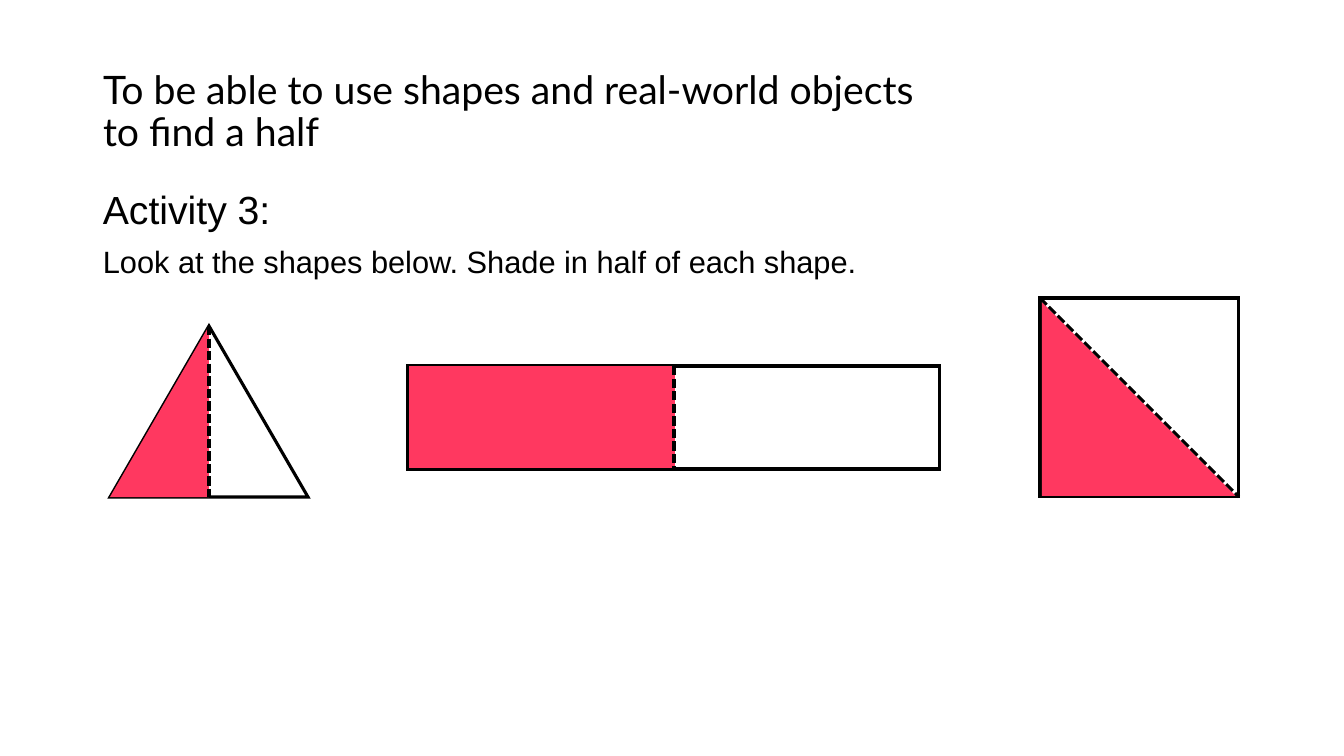
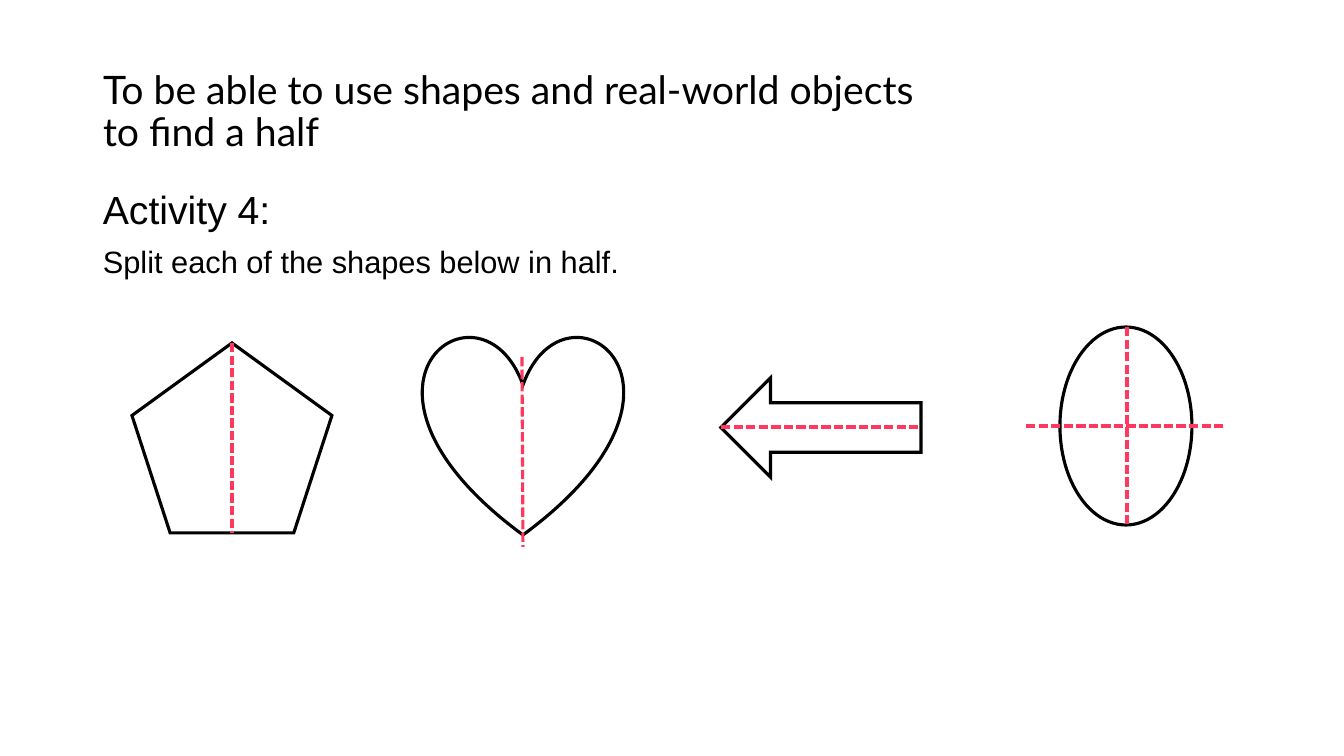
"""Build two activity slides about finding half of a shape."""
from lxml.etree import SubElement
from pptx import Presentation
from pptx.dml.color import RGBColor
from pptx.enum.dml import MSO_LINE
from pptx.enum.shapes import MSO_CONNECTOR, MSO_SHAPE as SHAPE
from pptx.enum.text import MSO_ANCHOR as ANCHOR, MSO_AUTO_SIZE, PP_ALIGN
from pptx.oxml.ns import qn
from pptx.util import Pt

COLOURS = {"ink": "000000", "paper": "FFFFFF", "half": "FF3860"}
RGB = {name: RGBColor.from_string(value) for name, value in COLOURS.items()}
EMU_PER_PX = 914400 / 100.8
OUTLINE = Pt(2.25)
TITLE = "To be able to use shapes and real-world objects\vto find a half"
TITLE_BOX = (93, 40, 968, 146)
TASK_BOX = (93, 186, 1159, 480)

ACTIVITIES = [
    {
        "task": ["Activity 3:", "Look at the shapes below. Shade in half of each shape."],
        "outlines": [
            (SHAPE.ISOSCELES_TRIANGLE, 110, 326, 198, 171),
            (SHAPE.RECTANGLE, 408, 366, 532, 103),
            (SHAPE.RECTANGLE, 1040, 298, 199, 199),
        ],
        "halves": [
            (SHAPE.RIGHT_TRIANGLE, 110, 326, 99, 171, None, True),
            (SHAPE.RECTANGLE, 411, 368, 262, 98, "half", False),
            (SHAPE.RIGHT_TRIANGLE, 1042, 302, 194, 194, None, False),
        ],
        "folds": [
            (209, 326, 209, 497),
            (674, 366, 674, 469),
            (1040, 298, 1239, 497),
        ],
        "fold_colour": "ink",
    },
    {
        "task": ["Activity 4:", "Split each of the shapes below in half."],
        "outlines": [
            (SHAPE.REGULAR_PENTAGON, 132, 343, 200, 190),
            (SHAPE.HEART, 423, 335, 200, 200),
            (SHAPE.LEFT_ARROW, 721, 378, 200, 99),
            (SHAPE.OVAL, 1060, 327, 132, 198),
        ],
        "halves": [],
        "folds": [
            (232, 343, 232, 533),
            (522, 357, 523, 547),
            (721, 427, 921, 427),
            (1026, 426, 1226, 426),
            (1127, 327, 1127, 525),
        ],
        "fold_colour": "half",
    },
]


def px(*lengths):
    """Turn pixel lengths into EMU."""
    return [round(length * EMU_PER_PX) for length in lengths]


def add_figure(slide, kind, box, fill, line=None):
    """Add a flat shape with an optional sharp-cornered outline."""
    figure = slide.shapes.add_shape(kind, *px(*box))
    figure.shadow.inherit = False
    figure.fill.solid()
    figure.fill.fore_color.rgb = RGB[fill]
    if line is None:
        figure.line.fill.background()
    else:
        figure.line.width = OUTLINE
        figure.line.color.rgb = RGB[line]
        SubElement(figure.element.spPr.find(qn("a:ln")), qn("a:miter"), lim="800000")
    return figure


deck = Presentation()
deck.slide_width, deck.slide_height = px(1344, 756)
title_only = deck.slide_layouts[5]

for activity in ACTIVITIES:
    slide = deck.slides.add_slide(title_only)
    objective = slide.shapes.title
    task = slide.shapes.add_textbox(*px(*TASK_BOX))
    objective.left, objective.top, objective.width, objective.height = px(*TITLE_BOX)
    objective.text_frame.text = TITLE
    task.text_frame.text = "\n".join(activity["task"])

    heading, instruction = task.text_frame.paragraphs
    instruction.space_before = Pt(10)
    for frame, anchor in ((objective.text_frame, ANCHOR.MIDDLE), (task.text_frame, ANCHOR.TOP)):
        frame.word_wrap = True
        frame.auto_size = MSO_AUTO_SIZE.NONE
        frame.vertical_anchor = anchor
    for paragraph, font_name, size in (
        (objective.text_frame.paragraphs[0], "Lato", 28),
        (heading, "Arial", 28),
        (instruction, "Arial", 22),
    ):
        paragraph.alignment = PP_ALIGN.LEFT
        paragraph.line_spacing = 0.9
        paragraph.font.color.rgb = RGB["ink"]
        for name, value in {"name": font_name, "size": Pt(size)}.items():
            setattr(paragraph.font, name, value)

    for kind, *box in activity["outlines"]:
        add_figure(slide, kind, box, "paper", "ink")

    for kind, left, top, width, height, edge, mirrored in activity["halves"]:
        half = add_figure(slide, kind, (left, top, width, height), "half", edge)
        if mirrored:
            half.element.spPr.xfrm.set("flipH", "1")

    for ends in activity["folds"]:
        fold = slide.shapes.add_connector(MSO_CONNECTOR.STRAIGHT, *px(*ends))
        fold.line.width = OUTLINE
        fold.line.color.rgb = RGB[activity["fold_colour"]]
        fold.line.dash_style = MSO_LINE.SQUARE_DOT
        SubElement(fold.element.spPr, qn("a:effectLst"))

deck.save("out.pptx")
